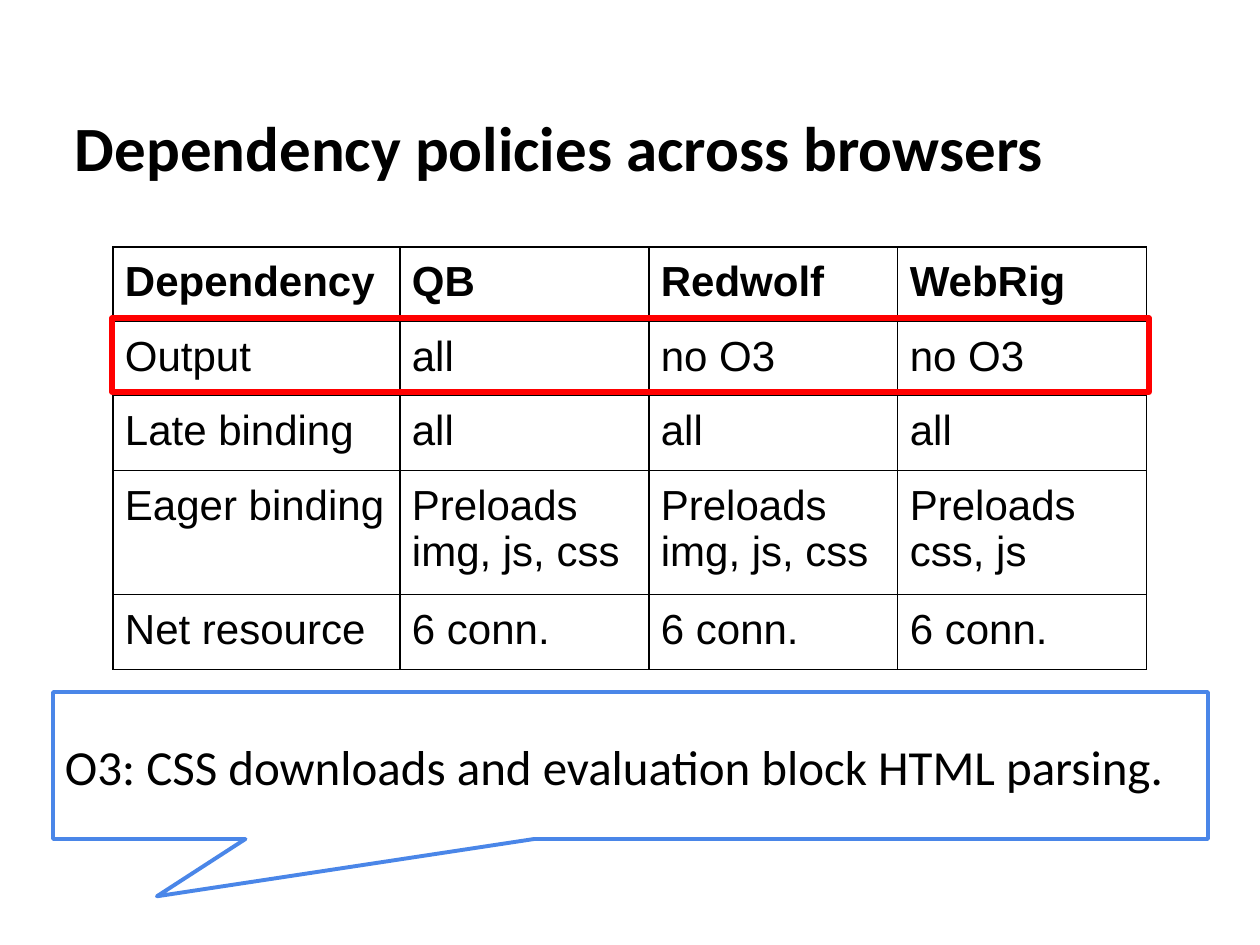
from lxml import etree
from pptx import Presentation
from pptx.dml.color import RGBColor
from pptx.enum.shapes import MSO_SHAPE
from pptx.enum.text import MSO_ANCHOR, PP_ALIGN
from pptx.oxml.ns import qn
from pptx.util import Pt

PX = 914400 / 126
BOX, CALLOUT = MSO_SHAPE.RECTANGLE, MSO_SHAPE.ROUNDED_RECTANGULAR_CALLOUT
TOP, MIDDLE, BOTTOM = MSO_ANCHOR.TOP, MSO_ANCHOR.MIDDLE, MSO_ANCHOR.BOTTOM
LEFT = PP_ALIGN.LEFT

COLORS = {"text": "000000", "paper": "FFFFFF", "highlight": "FF0000", "callout": "4A86E8"}

TITLE = "Dependency policies across browsers"
NOTE = "O3: CSS downloads and evaluation block HTML parsing."
POLICIES = [
    ["Dependency", "QB", "Redwolf", "WebRig"],
    ["Output", "all", "no O3", "no O3"],
    ["Late binding", "all", "all", "all"],
    ["Eager binding", "Preloads img, js, css", "Preloads img, js, css", "Preloads css, js"],
    ["Net resource", "6 conn.", "6 conn.", "6 conn."],
]

TABLE_LEFT, TABLE_TOP = 113, 247
COL_WIDTHS = [287, 249, 249, 249]
ROW_HEIGHTS = [72, 72, 72, 119, 72]
INSET = 12

TITLE_FONT = {"name": "Calibri", "size": Pt(36), "bold": True}
HEADER_FONT = {"name": "Arial", "size": Pt(24), "bold": True}
CELL_FONT = {"name": "Arial", "size": Pt(24), "bold": False}
NOTE_FONT = {"name": "Calibri", "size": Pt(28), "bold": False}


def px(n):
    return round(n * PX)


def rgb(name):
    return RGBColor.from_string(COLORS[name])


def set_text(holder, text, font, anchor):
    """Fill a shape or a table cell; both carry margins, but under different owners."""
    tf = holder.text_frame
    tf.word_wrap = True
    frame = tf if hasattr(holder, "shape_type") else holder
    for side in ("left", "right", "top", "bottom"):
        setattr(frame, f"margin_{side}", px(INSET))
    frame.vertical_anchor = anchor
    p = tf.paragraphs[0]
    p.alignment = LEFT
    r = p.add_run()
    r.text = text
    for key, value in font.items():
        setattr(r.font, key, value)
    r.font.color.rgb = rgb("text")


def set_borders(cell, width):
    tcPr = cell._tc.get_or_add_tcPr()
    for i, tag in enumerate(("a:lnL", "a:lnR", "a:lnT", "a:lnB")):
        ln = etree.Element(qn(tag), w=str(width))
        fill = etree.SubElement(ln, qn("a:solidFill"))
        etree.SubElement(fill, qn("a:srgbClr"), val=COLORS["text"])
        tcPr.insert(i, ln)


def add_outline(s, kind, box, color, width):
    sp = s.shapes.add_shape(kind, *map(px, box))
    sp.shadow.inherit = False
    sp.line.color.rgb = rgb(color)
    sp.line.width = Pt(width)
    return sp


def add_policies(s):
    frame = s.shapes.add_table(len(POLICIES), len(COL_WIDTHS), px(TABLE_LEFT), px(TABLE_TOP),
                               px(sum(COL_WIDTHS)), px(sum(ROW_HEIGHTS)))
    table = frame.table
    for column, width in zip(table.columns, COL_WIDTHS):
        column.width = px(width)
    for i, (row, height) in enumerate(zip(table.rows, ROW_HEIGHTS)):
        row.height = px(height)
        for cell, text in zip(row.cells, POLICIES[i]):
            set_text(cell, text, CELL_FONT if i else HEADER_FONT, TOP)
            cell.fill.background()
            set_borders(cell, Pt(0.75))


def main():
    prs = Presentation()
    prs.slide_width, prs.slide_height = px(1260), px(945)
    s = prs.slides.add_slide(prs.slide_layouts[6])

    title = s.shapes.add_textbox(*map(px, (63, 38, 1186, 158)))
    set_text(title, TITLE, TITLE_FONT, BOTTOM)

    add_policies(s)

    output_top = TABLE_TOP + ROW_HEIGHTS[0]
    output_row = (TABLE_LEFT - 1, output_top - 1, sum(COL_WIDTHS) + 3, ROW_HEIGHTS[1] + 2)
    highlight = add_outline(s, BOX, output_row, "highlight", 3)
    highlight.fill.background()

    note = add_outline(s, CALLOUT, (53, 692, 1155, 147), "callout", 2.25)
    for i, value in enumerate((-0.41, 0.89, 0)):
        note.adjustments[i] = value
    note.fill.solid()
    note.fill.fore_color.rgb = rgb("paper")
    set_text(note, NOTE, NOTE_FONT, MIDDLE)

    prs.save("out.pptx")


if __name__ == "__main__":
    main()
